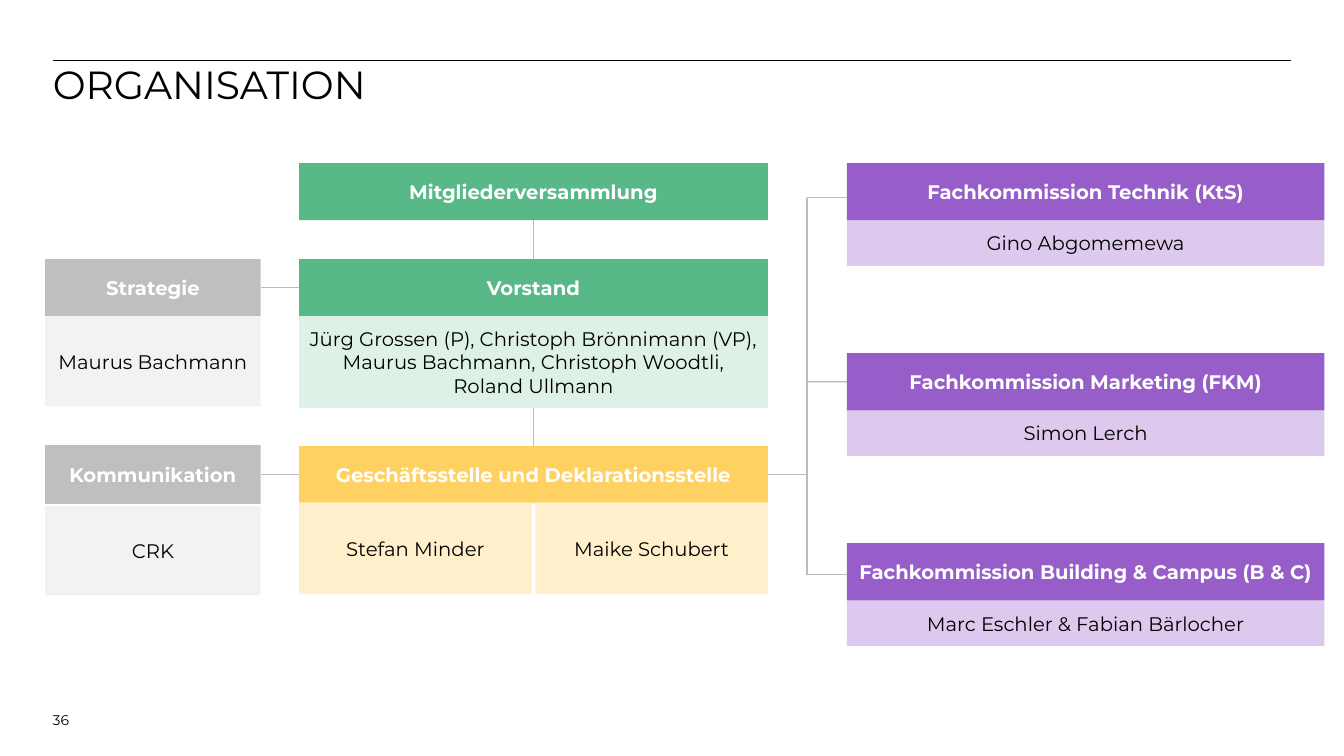
from pptx import Presentation
from pptx.dml.color import RGBColor
from pptx.enum import shapes, text
from pptx.oxml import ns
from pptx.util import Cm, Pt
from lxml import etree

COLORS = {
    "black": "000000", "white": "FFFFFF", "line": "BCBCBC",
    "green": "58B887", "light green": "DEF1E7",
    "gray": "BFBFBF", "light gray": "F2F2F2",
    "yellow": "FFD162", "light yellow": "FFF0CB",
    "purple": "975ECA", "light purple": "DCC9ED",
}


def write(frame, words, size=14, color="black", bold=False,
          align=text.PP_ALIGN.CENTER, anchor=text.MSO_ANCHOR.MIDDLE, inset=None):
    frame.word_wrap = True
    frame.auto_size = text.MSO_AUTO_SIZE.NONE
    frame.vertical_anchor = anchor
    if inset is not None:
        frame.margin_left = frame.margin_right = Cm(inset)
        frame.margin_top = frame.margin_bottom = Cm(inset)
    paragraph = frame.paragraphs[0]
    paragraph.alignment = align
    run = paragraph.add_run()
    run.text = words
    run.font.name = "Montserrat"
    run.font.size = Pt(size)
    run.font.bold = bold
    run.font.color.rgb = RGBColor.from_string(COLORS[color])


def draw_line(x1, y1, x2, y2, color="line"):
    line = slide.shapes.add_connector(
        shapes.MSO_CONNECTOR.STRAIGHT, Cm(x1), Cm(y1), Cm(x2), Cm(y2))
    line.line.color.rgb = RGBColor.from_string(COLORS[color])
    line.line.width = Pt(1)
    etree.SubElement(line._element.spPr, ns.qn("a:effectLst"))
    return line


prs = Presentation()
prs.slide_width, prs.slide_height = Cm(33.87), Cm(19.05)
slide = prs.slides.add_slide(prs.slide_layouts[5])

title = slide.shapes.title
title.left, title.top, title.width, title.height = Cm(1.33), Cm(1.53), Cm(31.2), Cm(3)
write(title.text_frame, "ORGANISATION", size=28, align=text.PP_ALIGN.LEFT,
      anchor=text.MSO_ANCHOR.TOP, inset=0)
draw_line(1.33, 1.53, 32.53, 1.53, color="black")

page_number = slide.shapes.add_textbox(Cm(1.33), Cm(17.93), Cm(0.8), Cm(0.42))
write(page_number.text_frame, "36", size=10, align=text.PP_ALIGN.LEFT,
      anchor=text.MSO_ANCHOR.TOP, inset=0)

STAFF_X, STAFF_W = 1.14, 5.43
CORE_X, CORE_W = 7.54, 11.81
HALF_W = 5.86
COMMISSION_X, COMMISSION_W = 21.34, 12.04
COMMISSION_TOP, COMMISSION_STEP = 4.11, 4.79
HEAD_H = 1.44
core_middle = CORE_X + CORE_W / 2

board_names = ("Jürg Grossen (P), Christoph Brönnimann (VP), "
               "Maurus Bachmann, Christoph Woodtli, Roland Ullmann")
units = [
    ("Mitgliederversammlung", "green", CORE_X, 4.11, CORE_W, HEAD_H),
    (board_names, "light green", CORE_X, 7.97, CORE_W, 2.31),
    ("Vorstand", "green", CORE_X, 6.53, CORE_W, HEAD_H),
    ("Maurus Bachmann", "light gray", STAFF_X, 7.98, STAFF_W, 2.26),
    ("Strategie", "gray", STAFF_X, 6.53, STAFF_W, HEAD_H),
    ("CRK", "light gray", STAFF_X, 12.75, STAFF_W, 2.25),
    ("Kommunikation", "gray", STAFF_X, 11.22, STAFF_W, 1.48),
    ("Geschäftsstelle und Deklarationsstelle", "yellow", CORE_X, 11.24, CORE_W, HEAD_H),
    ("Stefan Minder", "light yellow", CORE_X, 12.66, HALF_W, 2.31),
    ("Maike Schubert", "light yellow", CORE_X + CORE_W - HALF_W, 12.66, HALF_W, 2.31),
]
commissions = [
    ("Fachkommission Technik (KtS)", "Gino Abgomemewa"),
    ("Fachkommission Marketing (FKM)", "Simon Lerch"),
    ("Fachkommission Building & Campus (B & C)", "Marc Eschler & Fabian Bärlocher"),
]
for index, (commission, chair) in enumerate(commissions):
    top = COMMISSION_TOP + index * COMMISSION_STEP
    units += [
        (chair, "light purple", COMMISSION_X, top + HEAD_H, COMMISSION_W, 1.15),
        (commission, "purple", COMMISSION_X, top, COMMISSION_W, HEAD_H),
    ]

boxes = {}
for label, fill, left, top, width, height in units:
    box = slide.shapes.add_shape(
        shapes.MSO_SHAPE.RECTANGLE, Cm(left), Cm(top), Cm(width), Cm(height))
    box.shadow.inherit = False
    box.fill.solid()
    box.fill.fore_color.rgb = RGBColor.from_string(COLORS[fill])
    box.line.fill.background()
    is_head = not fill.startswith("light")
    write(box.text_frame, label, color="white" if is_head else "black", bold=is_head)
    boxes[label] = box

office = boxes["Geschäftsstelle und Deklarationsstelle"]
board = boxes["Vorstand"]
links = [
    (boxes["Mitgliederversammlung"], 2, board, 0),
    (boxes[board_names], 2, office, 0),
    (board, 1, boxes["Strategie"], 3),
    (office, 1, boxes["Kommunikation"], 3),
]
for start, start_side, end, end_side in links:
    link = draw_line(core_middle, 6, core_middle, 7)
    link.begin_connect(start, start_side)
    link.end_connect(end, end_side)

TRUNK_X = 20.34
branch_tops = [4.98, 9.62, 14.48]
draw_line(TRUNK_X, branch_tops[0], TRUNK_X, branch_tops[-1])
office_branch = draw_line(CORE_X + CORE_W, 11.96, TRUNK_X, 11.96)
office_branch.begin_connect(office, 3)
for y in branch_tops:
    branch = draw_line(COMMISSION_X, y, TRUNK_X, y)
    if y == branch_tops[1]:
        branch.begin_connect(boxes["Fachkommission Marketing (FKM)"], 1)

prs.save("out.pptx")
